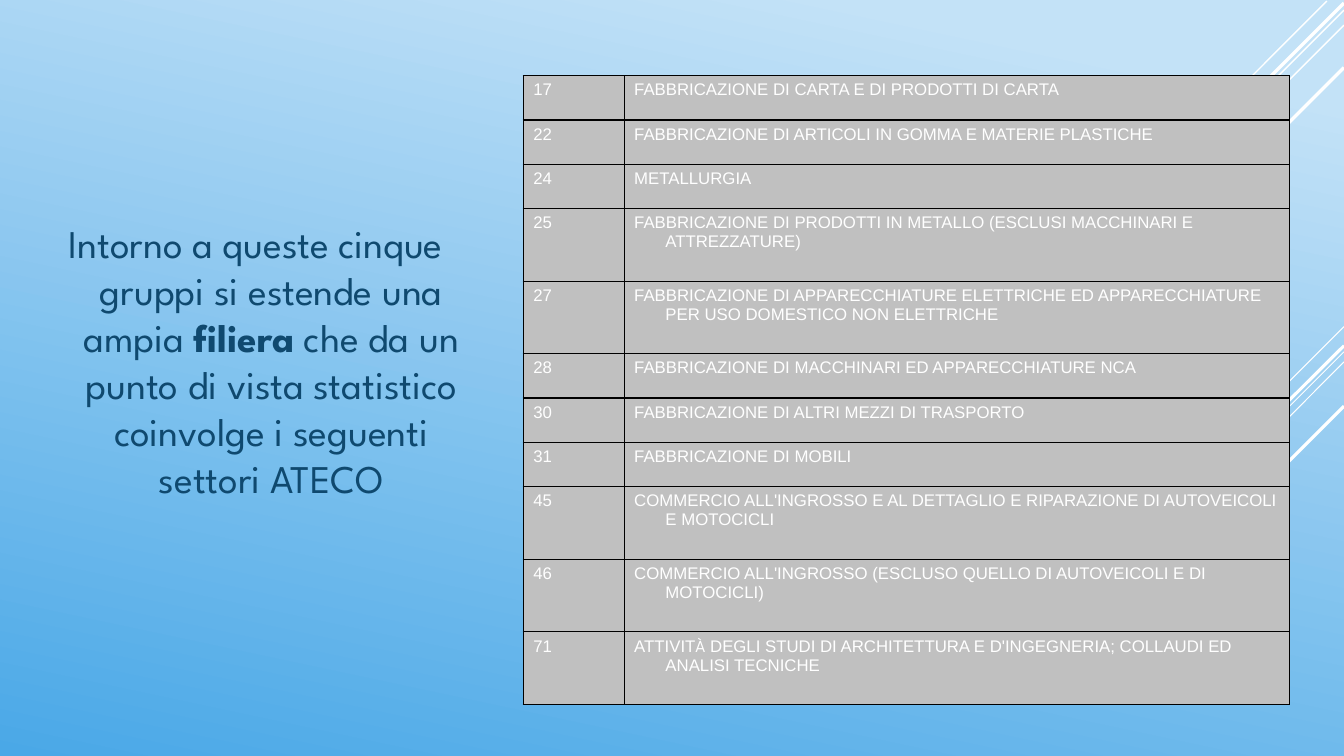
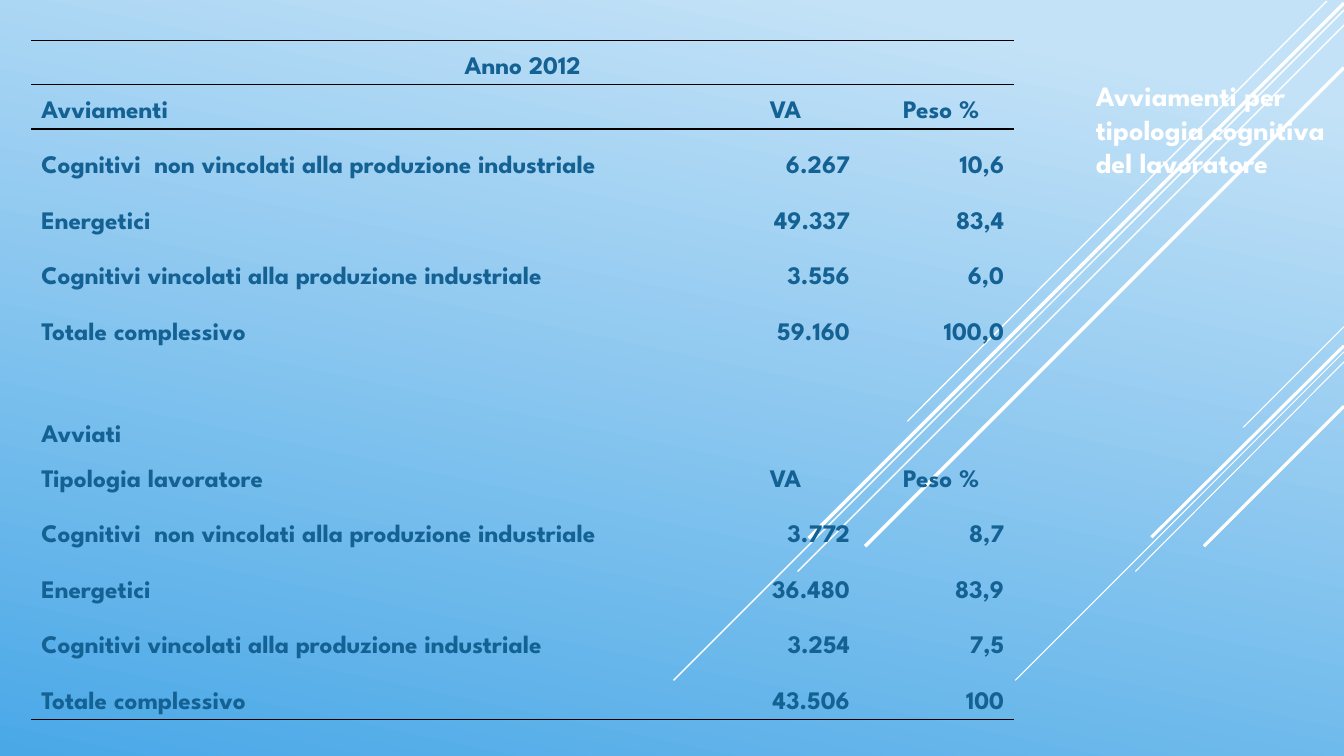
from lxml.etree import SubElement
from pptx import Presentation
from pptx.dml.color import RGBColor
from pptx.enum.shapes import MSO_CONNECTOR
from pptx.enum.text import MSO_ANCHOR, PP_ALIGN
from pptx.oxml.ns import qn
from pptx.util import Inches, Pt

COLORS = {
    "sky_light": "C3E2F7",
    "sky_deep": "4AA8E7",
    "white": "FFFFFF",
    "black": "000000",
    "body": "0F496F",
    "figures": "146194",
    "cell": "C0C0C0",
}
DISPLAY, PLAIN = "League Spartan", "Arial"
NO_STYLE = "{2D5ABB26-0587-4C30-8999-92F81FD0307C}"
HANGING = 0.31
RAYS = [
    (13.33, 3.24, 12.33, 4.24, 0.75),
    (13.33, 3.49, 10.07, 6.75, 0.75),
    (13.33, 3.59, 11.26, 5.67, 0.75),
    (13.33, 3.43, 11.42, 5.33, 2.25),
    (13.33, 4.03, 11.94, 5.42, 2.25),
    (13.16, 0.01, 9, 4.18, 1),
    (13.33, 0.1, 6.68, 6.75, 1),
    (13.33, 0.25, 7.91, 5.67, 1),
    (13.33, 0.03, 8.02, 5.34, 2.5),
    (13.33, 0.67, 8.58, 5.42, 2.5),
]
SECTORS = [
    ("17", "FABBRICAZIONE DI CARTA E DI PRODOTTI DI CARTA"),
    ("22", "FABBRICAZIONE DI ARTICOLI IN GOMMA E MATERIE PLASTICHE"),
    ("24", "METALLURGIA"),
    ("25", "FABBRICAZIONE DI PRODOTTI IN METALLO (ESCLUSI MACCHINARI E ATTREZZATURE)"),
    ("27", "FABBRICAZIONE DI APPARECCHIATURE ELETTRICHE ED APPARECCHIATURE "
           "PER USO DOMESTICO NON ELETTRICHE"),
    ("28", "FABBRICAZIONE DI MACCHINARI ED APPARECCHIATURE NCA"),
    ("30", "FABBRICAZIONE DI ALTRI MEZZI DI TRASPORTO"),
    ("31", "FABBRICAZIONE DI MOBILI"),
    ("45", "COMMERCIO ALL'INGROSSO E AL DETTAGLIO E RIPARAZIONE DI AUTOVEICOLI E MOTOCICLI"),
    ("46", "COMMERCIO ALL'INGROSSO (ESCLUSO QUELLO DI AUTOVEICOLI E DI MOTOCICLI)"),
    ("71", "ATTIVITÀ DEGLI STUDI DI ARCHITETTURA E D'INGEGNERIA; COLLAUDI ED ANALISI TECNICHE"),
]
LONG_SECTORS = {"25", "27", "45", "46", "71"}
WORKER_TYPES = [
    "Cognitivi  non vincolati alla produzione industriale",
    "Energetici",
    "Cognitivi vincolati alla produzione industriale",
    "Totale complessivo",
]
STARTS = [("6.267", "10,6"), ("49.337", "83,4"), ("3.556", "6,0"), ("59.160", "100,0")]
STARTED = [("3.772", "8,7"), ("36.480", "83,9"), ("3.254", "7,5"), ("43.506", "100")]


def rgb(name):
    """Return the palette colour of that name."""
    return RGBColor.from_string(COLORS[name])


def style(paragraph, size, font, color, bold=False, align=PP_ALIGN.LEFT, hanging=HANGING):
    """Format a paragraph and all of its runs."""
    paragraph.alignment = align
    properties = paragraph._p.get_or_add_pPr()
    properties.set("marL", str(Inches(hanging)))
    properties.set("indent", str(-Inches(hanging)))
    for run in paragraph.runs:
        run.font.size = Pt(size)
        run.font.name = font
        run.font.bold = bold
        run.font.color.rgb = rgb(color)


def split_runs(paragraph, *parts):
    """Fill a paragraph with one run per part."""
    paragraph.text = parts[0]
    for part in parts[1:]:
        paragraph.add_run().text = part


def add_text_frame(slide, box):
    """Add a wrapping text box and return its frame."""
    frame = slide.shapes.add_textbox(*map(Inches, box)).text_frame
    frame.word_wrap = True
    return frame


def add_plain_table(slide, left, top, widths, heights):
    """Add a table without any built-in style."""
    frame = slide.shapes.add_table(
        len(heights), len(widths), Inches(left), Inches(top),
        Inches(sum(widths)), Inches(sum(heights)))
    next(frame._element.iter(qn("a:tableStyleId"))).text = NO_STYLE
    table = frame.table
    table.first_row = table.horz_banding = False
    for column, width in zip(table.columns, widths):
        column.width = Inches(width)
    for row, height in zip(table.rows, heights):
        row.height = Inches(height)
    return table


def add_borders(cell, sides):
    """Draw thin black borders on the given sides, in L, R, T, B order."""
    properties = cell._tc.get_or_add_tcPr()
    for side in sides:
        line = SubElement(properties, qn(f"a:ln{side}"), w=str(Pt(1)))
        fill = SubElement(line, qn("a:solidFill"))
        SubElement(fill, qn("a:srgbClr"), val=COLORS["black"])


def add_themed_slide(prs):
    """Add a blank slide with the sky gradient and the white rays."""
    slide = prs.slides.add_slide(prs.slide_layouts[6])
    sky = slide.background.fill
    sky.gradient()
    sky.gradient_angle = 258
    stops = zip(sky.gradient_stops, (0.1, 1), ("sky_light", "sky_deep"))
    for stop, position, color in stops:
        stop.position = position
        stop.color.rgb = rgb(color)
    for *ends, weight in RAYS:
        ray = slide.shapes.add_connector(MSO_CONNECTOR.STRAIGHT, *map(Inches, ends))
        ray.line.color.rgb = rgb("white")
        ray.line.width = Pt(weight)
        SubElement(ray._element.spPr, qn("a:effectLst"))
    return slide


def add_introduction(slide, box):
    """Place the sentence that introduces the sectors."""
    frame = add_text_frame(slide, box)
    frame.vertical_anchor = MSO_ANCHOR.MIDDLE
    sentence = frame.paragraphs[0]
    split_runs(sentence, "Intorno a queste cinque gruppi si estende una ampia ", "filiera",
               " che da un punto di vista statistico coinvolge i seguenti settori ATECO")
    style(sentence, 28, DISPLAY, "body", align=PP_ALIGN.CENTER)
    sentence.runs[1].font.bold = True
    sentence.space_before, sentence.space_after = Pt(5.6), Pt(6)


def add_sector_table(slide, left, top):
    """Place the table of ATECO sectors."""
    heights = [0.72 if code in LONG_SECTORS else 0.44 for code, _ in SECTORS]
    table = add_plain_table(slide, left, top, [1, 6.6], heights)
    for row, sector in enumerate(SECTORS):
        for column, wording in enumerate(sector):
            cell = table.cell(row, column)
            paragraph = cell.text_frame.paragraphs[0]
            before, accent, after = wording.partition("À")
            split_runs(paragraph, *filter(None, (before, accent, after)))
            style(paragraph, 12, PLAIN, "white")
            if accent:
                paragraph.runs[1].font.name = DISPLAY
            add_borders(cell, "LRTB")
            cell.fill.solid()
            cell.fill.fore_color.rgb = rgb("cell")


def add_worker_table(slide, left, top):
    """Place the table of placements by type of worker."""
    def figures(values):
        return [(kind, *pair) for kind, pair in zip(WORKER_TYPES, values)]

    rows = [("Anno 2012", "", ""), ("Avviamenti", "VA", "Peso %"), *figures(STARTS),
            ("", "", ""), ("Avviati", "", ""),
            ("Tipologia lavoratore", "VA", "Peso %"), *figures(STARTED)]
    heights = [0.44] * 2 + [0.55] * 4 + [0.51] * 2 + [0.44] + [0.55] * 4
    table = add_plain_table(slide, left, top, [6.66, 1.64, 1.45], heights)
    table.cell(0, 0).merge(table.cell(0, 2))
    borders = {0: "TB", 1: "T", len(rows) - 1: "B"}
    for row, wordings in enumerate(rows):
        for column, wording in enumerate(wordings):
            cell = table.cell(row, column)
            cell.text_frame.text = wording
            cell.vertical_anchor = MSO_ANCHOR.BOTTOM
            if row == 0 or wording in ("VA", "Peso %"):
                align = PP_ALIGN.CENTER
            else:
                align = PP_ALIGN.RIGHT if column else PP_ALIGN.LEFT
            if column == 1 and align == PP_ALIGN.RIGHT:
                cell.margin_right = Inches(0.18)
            style(cell.text_frame.paragraphs[0], 18, DISPLAY, "figures", True, align)
            add_borders(cell, borders.get(row, ""))
            cell.fill.background()


def add_side_title(slide, box):
    """Place the white title beside the table."""
    frame = add_text_frame(slide, box)
    frame.text = "Avviamenti per tipologia cognitiva del lavoratore"
    style(frame.paragraphs[0], 20, DISPLAY, "white", True, hanging=0)


def main():
    """Build and save the presentation."""
    prs = Presentation()
    prs.slide_width, prs.slide_height = Inches(13.33), Inches(7.5)
    sectors = add_themed_slide(prs)
    add_introduction(sectors, (0.34, 0.75, 4.39, 5.65))
    add_sector_table(sectors, 5.19, 0.75)
    workers = add_themed_slide(prs)
    add_worker_table(workers, 0.31, 0.4)
    add_side_title(workers, (10.77, 0.73, 2.56, 1.43))
    prs.save("out.pptx")


if __name__ == "__main__":
    main()
